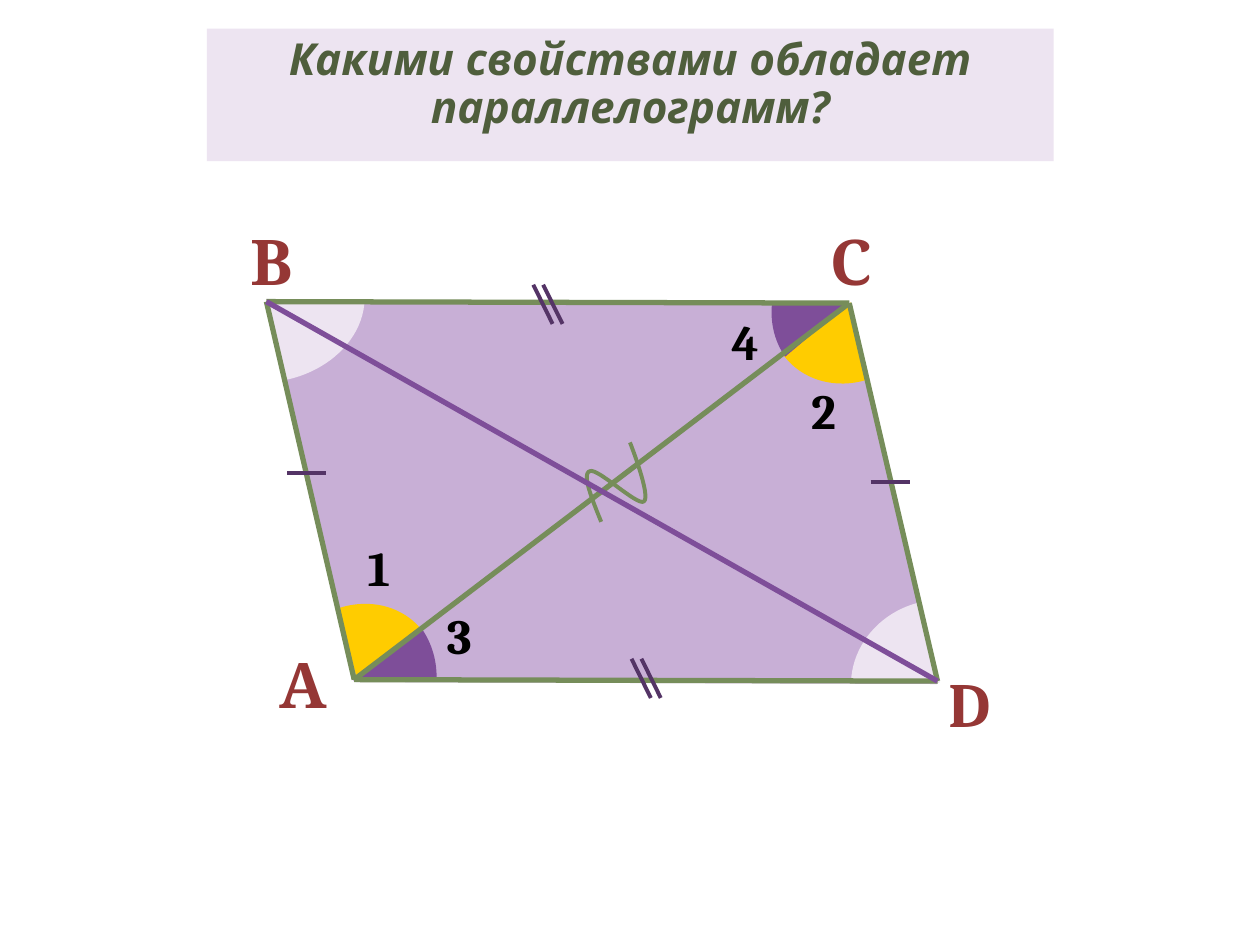
from lxml import etree
from pptx import Presentation
from pptx.dml.color import RGBColor
from pptx.enum.shapes import MSO_CONNECTOR, MSO_SHAPE
from pptx.enum.text import MSO_ANCHOR, PP_ALIGN
from pptx.oxml.ns import qn
from pptx.util import Cm, Pt

STRAIGHT = MSO_CONNECTOR.STRAIGHT
RECTANGLE = MSO_SHAPE.RECTANGLE
TRIANGLE = MSO_SHAPE.ISOSCELES_TRIANGLE
PIE = MSO_SHAPE.PIE
TOP = MSO_ANCHOR.TOP
CENTER = PP_ALIGN.CENTER

COLORS = {
    "lilac": "C8AFD6",
    "pale": "EDE4F1",
    "violet": "7E4E99",
    "dark_violet": "543466",
    "yellow": "FFCC00",
    "green": "768D5A",
    "dark_green": "4F5E3C",
    "red": "953735",
    "black": "000000",
}
VERTICES = {
    "A": (7.14, 13.7),
    "B": (5.37, 6.08),
    "C": (17.12, 6.11),
    "D": (18.9, 13.73),
}


def rgb(name):
    """Return the named colour."""
    return RGBColor.from_string(COLORS[name])


def set_font(font, color, **values):
    """Apply colour and format values to a font."""
    font.color.rgb = rgb(color)
    for attribute, value in values.items():
        setattr(font, attribute, value)


def add_area(slide, kind, box, color, rotation=0, outlined=False):
    """Add a filled preset shape, optionally outlined in its own colour."""
    area = slide.shapes.add_shape(kind, *map(Cm, box))
    area.shadow.inherit = False
    area.rotation = rotation
    area.fill.solid()
    area.fill.fore_color.rgb = rgb(color)
    if outlined:
        area.line.color.rgb = rgb(color)
        area.line.width = Pt(1.25)
    else:
        area.line.fill.background()
    return area


def add_half(slide, box, rotation):
    """Add one triangular half of the parallelogram."""
    half = add_area(slide, TRIANGLE, box, "lilac", rotation, True)
    half.adjustments[0] = 0.257


def add_angle(slide, box, color, rotation, start, end, outlined=False):
    """Add an angle sector between two directions given in degrees."""
    sector = add_area(slide, PIE, box, color, rotation, outlined)
    for index, degrees in enumerate((start, end)):
        sector.adjustments[index] = degrees * 0.6


def add_segment(shapes, start, end, color, width):
    """Add a straight segment without a shadow."""
    segment = shapes.add_connector(STRAIGHT, *map(Cm, (*start, *end)))
    segment.line.color.rgb = rgb(color)
    segment.line.width = Pt(width)
    etree.SubElement(segment._element.spPr, qn("a:effectLst"))


def add_side(slide, ends, color="green"):
    """Join two vertices named by a pair of letters."""
    start, end = (VERTICES[letter] for letter in ends)
    add_segment(slide.shapes, start, end, color, 3)


def add_double_tick(slide, left, top):
    """Add a pair of slanted equality marks."""
    marks = slide.shapes.add_group_shape().shapes
    for x in (left + 0.2, left):
        add_segment(marks, (x, top), (x + 0.39, top + 0.79), "dark_violet", 2.25)


def add_label(slide, text, box, size, color, wrap):
    """Add a bold vertex or angle label."""
    label = slide.shapes.add_textbox(*map(Cm, box))
    label.text_frame.word_wrap = wrap
    paragraph = label.text_frame.paragraphs[0]
    paragraph.text = text
    set_font(paragraph.runs[0].font, color, name="Cambria", size=Pt(size), bold=True)


def bezier(points, steps=16):
    """Return the points along a cubic curve after its start."""
    weights = (1, 3, 3, 1)
    return [
        tuple(
            sum(w * (1 - t) ** (3 - i) * t**i * p[axis]
                for i, (w, p) in enumerate(zip(weights, points)))
            for axis in (0, 1)
        )
        for t in (step / steps for step in range(1, steps + 1))
    ]


def add_wave(slide):
    """Add the curved mark at the crossing of the diagonals."""
    controls = [
        (12.12, 10.52), (11.92, 10.03), (11.73, 9.55), (11.89, 9.5),
        (12.04, 9.42), (12.85, 10.21), (12.98, 10.11),
        (13.13, 10.01), (12.7, 8.92), (12.7, 8.92),
    ]
    builder = slide.shapes.build_freeform(*map(Cm, controls[0]))
    for first in range(0, len(controls) - 1, 3):
        curve = bezier(controls[first:first + 4])
        builder.add_line_segments([(Cm(x), Cm(y)) for x, y in curve], close=False)
    wave = builder.convert_to_shape()
    wave.shadow.inherit = False
    wave.fill.background()
    wave.line.color.rgb = rgb("green")
    wave.line.width = Pt(2.25)


def add_title(slide, text):
    """Add the question on its pale band."""
    band = add_area(slide, RECTANGLE, (4.17, 0.58, 17.07, 2.67), "pale")
    frame = band.text_frame
    frame.word_wrap = True
    frame.vertical_anchor = TOP
    frame.margin_top = Cm(0.18)
    paragraph = frame.paragraphs[0]
    paragraph.text = text
    paragraph.alignment = CENTER
    paragraph.line_spacing = 0.9
    set_font(paragraph.runs[0].font, "dark_green", name="Noto Sans",
             size=Pt(25.2), bold=True, italic=True)


def main():
    """Build the parallelogram slide."""
    deck = Presentation()
    deck.slide_width, deck.slide_height = Cm(25.4), Cm(19.05)
    slide = deck.slides.add_slide(deck.slide_layouts[6])

    add_half(slide, (3.71, 3.51, 12.55, 7.14), 322.8)
    add_half(slide, (8.05, 9.22, 12.52, 7.11), 142.8)
    for letter, left, top, width in (
        ("А", 5.38, 12.88, 1.3), ("В", 4.8, 4.37, 1.22),
        ("С", 16.48, 4.37, 1.19), ("D", 18.87, 13.28, 1.32),
    ):
        add_label(slide, letter, (left, top, width, 1.8), 36, "red", False)

    add_angle(slide, (5.72, 12.07, 2.97, 3.3), "yellow", 53.3, 202.25, 269.6)
    add_angle(slide, (15.6, 4.37, 3.1, 3.45), "yellow", 226.8, 209.63, 275.93)
    add_wave(slide)
    add_angle(slide, (5.38, 12.04, 3.48, 3.33), "violet", 116.6, 206.9, 243.66)
    add_angle(slide, (15.42, 4.67, 3.3, 2.95), "violet", 297.8, 202.07, 243.09)
    add_side(slide, "AC")
    for number, left, top, width in (
        ("1", 7.16, 10.72, 0.99), ("2", 16.1, 7.54, 0.99),
        ("3", 8.76, 12.09, 0.99), ("4", 14.5, 6.15, 0.79),
    ):
        add_label(slide, number, (left, top, width, 1.45), 28, "black", True)

    add_angle(slide, (17.17, 12.12, 3.51, 3.25), "pale", 345.7, 194.78, 268.44, True)
    add_angle(slide, (3.53, 4.6, 3.81, 3.07), "pale", 168.7, 190.85, 267.62, True)
    for ends in ("CD", "AD", "BC", "BA"):
        add_side(slide, ends)

    add_title(slide, "Какими свойствами обладает параллелограмм?")
    for left, height in ((17.55, 9.71), (5.79, 9.53)):
        add_segment(slide.shapes, (left, height), (left + 0.79, height), "dark_violet", 2.25)
    add_double_tick(slide, 10.75, 5.74)
    add_double_tick(slide, 12.73, 13.28)
    add_side(slide, "BD", "violet")

    deck.save("out.pptx")


if __name__ == "__main__":
    main()
